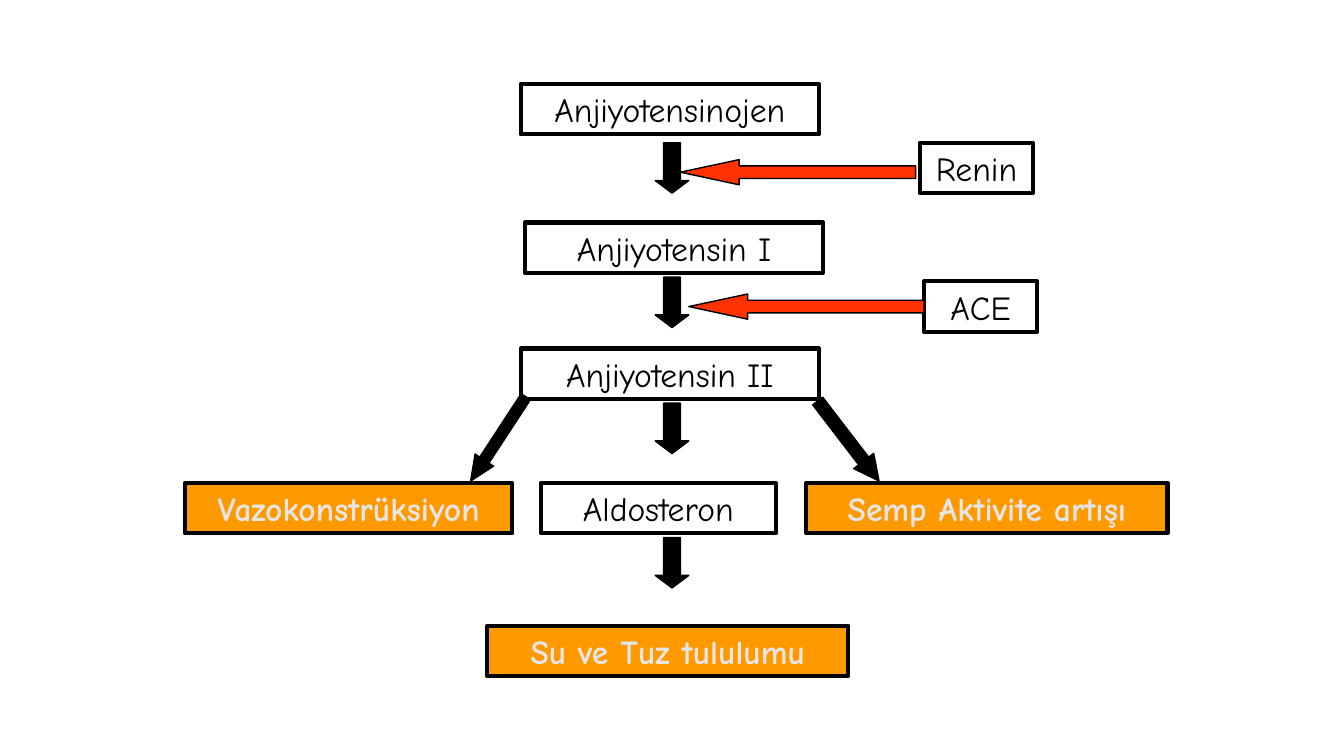
from dataclasses import dataclass

from pptx import Presentation
from pptx.dml.color import RGBColor
from pptx.enum.shapes import MSO_SHAPE as Preset
from pptx.enum.text import MSO_ANCHOR as Anchor, PP_ALIGN as Align
from pptx.util import Pt


@dataclass(frozen=True)
class Theme:
    font: str = "Comic Neue"
    text_size: int = 24
    box_line: int = 3
    arrow_line: int = 1
    black: RGBColor = RGBColor(0x00, 0x00, 0x00)
    orange: RGBColor = RGBColor(0xFF, 0x99, 0x00)
    red: RGBColor = RGBColor(0xFF, 0x33, 0x00)
    pale: RGBColor = RGBColor(0xE7, 0xE6, 0xE6)


THEME = Theme()
EMU_PER_PX = 9525
SLIDE_SIZE = (1280, 720)
BOX_HEIGHT = 48

# Content: text, left, top, width
STEPS = [
    ("Anjiyotensinojen", 496, 80, 284),
    ("Anjiyotensin I", 500, 212, 284),
    ("Anjiyotensin II", 496, 332, 284),
    ("Aldosteron", 515, 460, 224),
]
EFFECTS = [
    ("Semp Aktivite artışı", 768, 460, 344),
    ("Vazokonstrüksiyon", 176, 460, 312),
    ("Su ve Tuz tululumu", 464, 596, 344),
]
ENZYMES = [
    ("Renin", 876, 136, 108),
    ("ACE", 880, 268, 108),
]

# Arrows: tops of the central column, slanted branches, enzyme arrow tips
STEP_ARROW_LEFT, STEP_ARROW_SIZE = 624, (32, 48)
STEP_ARROW_TOPS = [136, 264, 384, 512]
BRANCH_ARROWS = [  # left, top, width, height, rotation, head ratio
    (464, 370, 21, 96, 33.2, 1.134),
    (796, 372, 24, 96, 322.5, 1),
]
ENZYME_ARROW_SIZE = (224, 24)
ENZYME_ARROWS = [(656, 280), (648, 152)]


def px(value):
    return value * EMU_PER_PX


def add_preset(slide, preset, left, top, width, height, fill, line_width):
    shape = slide.shapes.add_shape(preset, px(left), px(top), px(width), px(height))
    shape.shadow.inherit = False
    if fill is None:
        shape.fill.background()
    else:
        shape.fill.solid()
        shape.fill.fore_color.rgb = fill
    shape.line.color.rgb = THEME.black
    shape.line.width = Pt(line_width)
    return shape


def add_box(slide, text, left, top, width, fill=None, color=THEME.black, bold=False):
    box = add_preset(slide, Preset.RECTANGLE, left, top, width, BOX_HEIGHT,
                     fill, THEME.box_line)
    frame = box.text_frame
    frame.word_wrap = True
    frame.vertical_anchor = Anchor.MIDDLE
    frame.text = text
    paragraph = frame.paragraphs[0]
    paragraph.alignment = Align.CENTER
    font = paragraph.runs[0].font
    font.name, font.size, font.bold = THEME.font, Pt(THEME.text_size), bold
    font.color.rgb = color


def add_arrow(slide, preset, left, top, width, height, fill, head, rotation=0):
    arrow = add_preset(slide, preset, left, top, width, height, fill, THEME.arrow_line)
    arrow.adjustments[0] = 0.5
    arrow.adjustments[1] = head
    arrow.rotation = rotation


def main():
    presentation = Presentation()
    presentation.slide_width, presentation.slide_height = map(px, SLIDE_SIZE)
    slide = presentation.slides.add_slide(presentation.slide_layouts[6])

    # Boxes
    for box in STEPS:
        add_box(slide, *box)
    for box in EFFECTS:
        add_box(slide, *box, fill=THEME.orange, color=THEME.pale, bold=True)

    # Black arrows
    for top in STEP_ARROW_TOPS:
        add_arrow(slide, Preset.DOWN_ARROW, STEP_ARROW_LEFT, top, *STEP_ARROW_SIZE,
                  THEME.black, 0.375)
    for left, top, width, height, rotation, head in BRANCH_ARROWS:
        add_arrow(slide, Preset.DOWN_ARROW, left, top, width, height,
                  THEME.black, head, rotation)

    # Enzymes and their red arrows
    for box in ENZYMES:
        add_box(slide, *box)
    for left, top in ENZYME_ARROWS:
        add_arrow(slide, Preset.LEFT_ARROW, left, top, *ENZYME_ARROW_SIZE,
                  THEME.red, 2.333)

    presentation.save("out.pptx")


if __name__ == "__main__":
    main()
